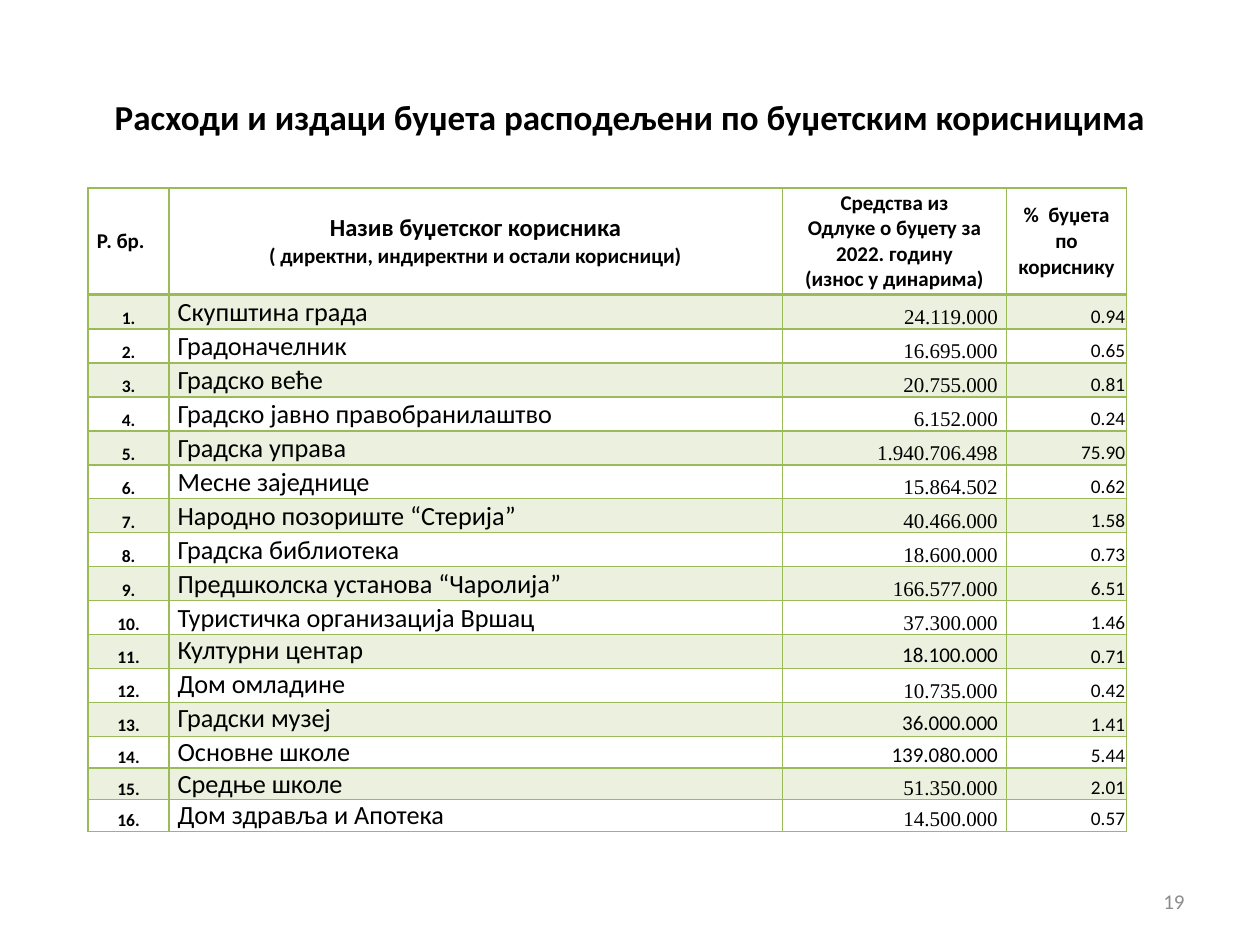
from lxml import etree
from pptx import Presentation
from pptx.dml.color import RGBColor
from pptx.enum.text import MSO_ANCHOR, PP_ALIGN
from pptx.oxml.ns import qn
from pptx.util import Inches, Pt

LEFT, CENTER, RIGHT, JUSTIFY = PP_ALIGN.LEFT, PP_ALIGN.CENTER, PP_ALIGN.RIGHT, PP_ALIGN.JUSTIFY
TOP, MIDDLE, BOTTOM = MSO_ANCHOR.TOP, MSO_ANCHOR.MIDDLE, MSO_ANCHOR.BOTTOM

BLACK = RGBColor(0x00, 0x00, 0x00)
GREY = RGBColor(0x8C, 0x8C, 0x8C)
GREEN = RGBColor(0x9B, 0xBB, 0x59)
PALE_GREEN = RGBColor(0xEB, 0xF1, 0xDE)
SANS, SERIF = "Calibri", "Times New Roman"

COLUMN_WIDTHS = [0.64, 4.87, 1.78, 0.95]
ROW_HEIGHTS = [0.85] + [0.27] * 13 + [0.25, 0.25, 0.21]
HEADERS = [
    ("Р. бр.", LEFT),
    ("Назив буџетског корисника\n( директни, индиректни и остали корисници)", CENTER),
    ("Средства из\nОдлуке о буџету за 2022. годину\n(износ у динарима)", CENTER),
    ("%  буџета по кориснику", CENTER),
]
USERS = [
    ("Скупштина града", "24.119.000", "0.94"),
    ("Градоначелник", "16.695.000", "0.65"),
    ("Градско веће", "20.755.000", "0.81"),
    ("Градско јавно правобранилаштво", "6.152.000", "0.24"),
    ("Градска управа", "1.940.706.498", "75.90"),
    ("Месне заједнице", "15.864.502", "0.62"),
    ("Народно позориште “Стерија”", "40.466.000", "1.58"),
    ("Градска библиотека", "18.600.000", "0.73"),
    ("Предшколска установа “Чаролија”", "166.577.000", "6.51"),
    ("Туристичка организација Вршац", "37.300.000", "1.46"),
    ("Културни центар", "18.100.000", "0.71"),
    ("Дом омладине", "10.735.000", "0.42"),
    ("Градски музеј", "36.000.000", "1.41"),
    ("Основне школе", "139.080.000", "5.44"),
    ("Средње школе", "51.350.000", "2.01"),
    ("Дом здравља и Апотека", "14.500.000", "0.57"),
]
SANS_AMOUNT_ROWS = {11, 13, 14}
JUSTIFIED_ROWS = range(11, 16)


def write(text_frame, text, size, alignment, bold=False, font=SANS, color=BLACK):
    text_frame.text = text
    for paragraph in text_frame.paragraphs:
        paragraph.alignment = alignment
        for run in paragraph.runs:
            run.font.size = Pt(size)
            run.font.bold = bold
            run.font.name = font
            run.font.color.rgb = color


def style_cell(cell, anchor, fill_color, bottom_width=1, top_width=1):
    """Set anchor, margins, borders (in points) and fill of a table cell."""
    cell.vertical_anchor = anchor
    cell.margin_left = cell.margin_right = Inches(0.07)
    cell.margin_top = cell.margin_bottom = 0
    properties = cell._tc.get_or_add_tcPr()
    for tag, width in (("a:lnL", 1), ("a:lnR", 1), ("a:lnT", top_width), ("a:lnB", bottom_width)):
        line = etree.SubElement(properties, qn(tag), w=str(Pt(width)))
        solid_fill = etree.SubElement(line, qn("a:solidFill"))
        etree.SubElement(solid_fill, qn("a:srgbClr"), val=str(GREEN))
    if fill_color is None:
        cell.fill.background()
    else:
        cell.fill.solid()
        cell.fill.fore_color.rgb = fill_color


presentation = Presentation()
presentation.slide_width = Inches(10)
presentation.slide_height = Inches(7.5)
slide = presentation.slides.add_slide(presentation.slide_layouts[6])

title = slide.shapes.add_textbox(Inches(0.5), Inches(0.3), Inches(9), Inches(1.25)).text_frame
title.word_wrap = True
title.vertical_anchor = MIDDLE
write(title, "Расходи и издаци буџета расподељени по буџетским корисницима", 20, CENTER, bold=True)

table = slide.shapes.add_table(
    len(ROW_HEIGHTS), len(COLUMN_WIDTHS), Inches(0.7), Inches(1.49), Inches(8.23), Inches(5.07)
).table
table.first_row = False
table.horz_banding = False
for column, width in zip(table.columns, COLUMN_WIDTHS):
    column.width = Inches(width)
for row, height in zip(table.rows, ROW_HEIGHTS):
    row.height = Inches(height)

for index, (text, alignment) in enumerate(HEADERS):
    cell = table.cell(0, index)
    write(cell.text_frame, text, 12, alignment, bold=True)
    style_cell(cell, MIDDLE, None, bottom_width=2)
table.cell(0, 1).text_frame.paragraphs[0].runs[0].font.size = Pt(14)

for number, (name, amount, share) in enumerate(USERS, start=1):
    number_cell, name_cell, amount_cell, share_cell = table.rows[number].cells
    justified = number in JUSTIFIED_ROWS
    amount_font = SANS if number in SANS_AMOUNT_ROWS else SERIF
    write(number_cell.text_frame, f"{number}.", 10, CENTER, bold=True)
    write(name_cell.text_frame, name, 15, JUSTIFY if justified else LEFT)
    write(amount_cell.text_frame, amount, 12, RIGHT, font=amount_font)
    write(share_cell.text_frame, share, 11, RIGHT)
    for cell in table.rows[number].cells:
        anchor = TOP if justified and cell == name_cell else BOTTOM
        style_cell(cell, anchor, PALE_GREEN if number % 2 else None, top_width=2 if number == 1 else 1)
    share_cell.margin_left = share_cell.margin_right = share_cell.margin_top = Inches(0.01)

page_number = slide.shapes.add_textbox(Inches(7.17), Inches(6.95), Inches(2.33), Inches(0.4)).text_frame
page_number.word_wrap = True
page_number.vertical_anchor = MIDDLE
write(page_number, "19", 12, RIGHT, color=GREY)

presentation.save("out.pptx")
